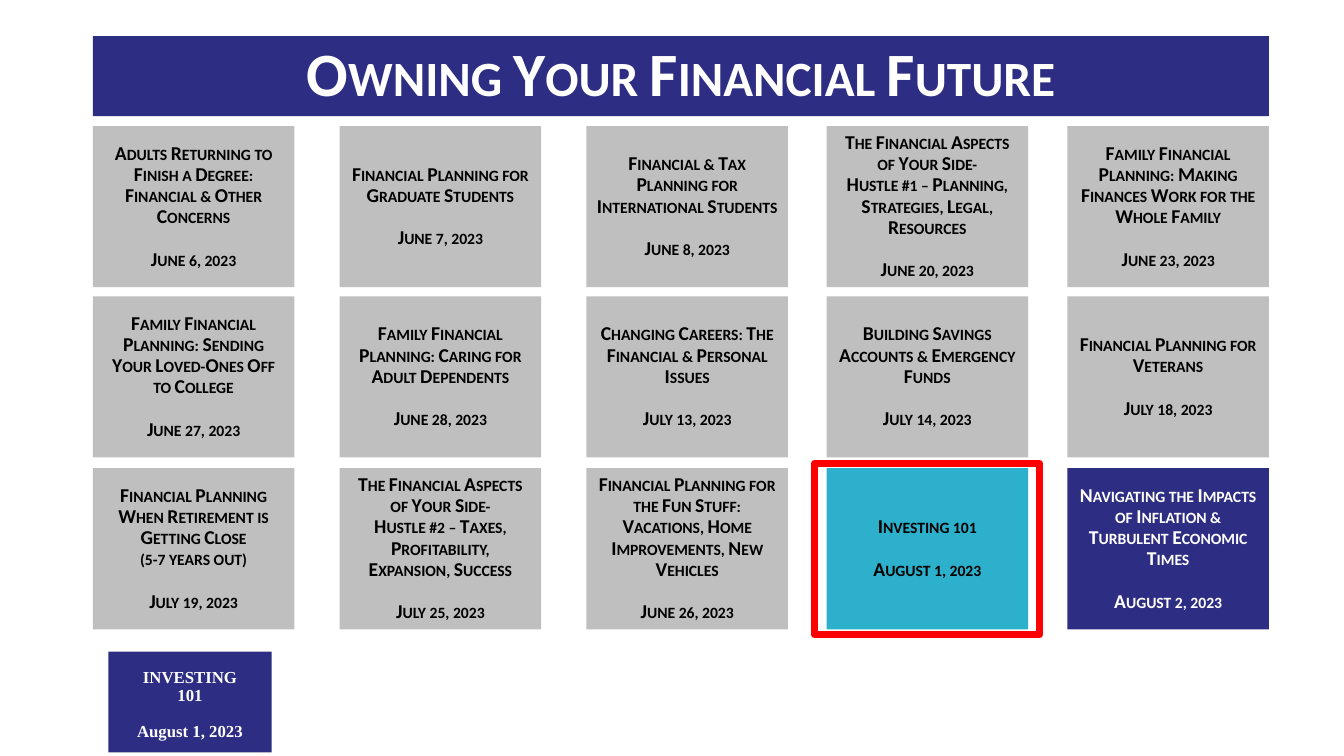
import pptx
import pptx.util
import pptx.dml.color
import pptx.enum.shapes
import pptx.enum.text

Cm = pptx.util.Cm
Pt = pptx.util.Pt

HEADING = "Owning Your Financial Future"
SESSIONS = [
    [
        ("Adults Returning to Finish a Degree: Financial & Other Concerns", "June 6, 2023"),
        ("Financial Planning for Graduate Students", "June 7, 2023"),
        ("Financial & Tax Planning for International Students", "June 8, 2023"),
        ("The Financial Aspects of Your Side-\nHustle #1 – Planning, Strategies, Legal, Resources",
         "June 20, 2023"),
        ("Family Financial Planning: Making Finances Work for the Whole Family", "June 23, 2023"),
    ],
    [
        ("Family Financial Planning: Sending Your Loved-Ones Off to College", "June 27, 2023"),
        ("Family Financial Planning: Caring for Adult Dependents", "June 28, 2023"),
        ("Changing Careers: The Financial & Personal Issues", "July 13, 2023"),
        ("Building Savings Accounts & Emergency Funds", "July 14, 2023"),
        ("Financial Planning for Veterans", "July 18, 2023"),
    ],
    [
        ("Financial Planning When Retirement is Getting Close\n(5-7 years out)", "July 19, 2023"),
        ("The Financial Aspects of Your Side-\nHustle #2 – Taxes, Profitability, Expansion, Success",
         "July 25, 2023"),
        ("Financial Planning for the Fun Stuff: Vacations, Home Improvements, New Vehicles",
         "June 26, 2023"),
        ("Investing 101", "August 1, 2023"),
        ("Navigating the Impacts of Inflation & Turbulent Economic Times", "August 2, 2023"),
    ],
]
CURRENT_SESSION = ["INVESTING", "101", "August 1, 2023"]

THEME = {
    "navy": "2D2D83", "grey": "BFBFBF", "teal": "2DB0CC",
    "red": "FF0000", "white": "FFFFFF", "black": "000000",
    "font": "Calibri", "label_font": "Times New Roman",
    "heading_size": 44, "session_size": 14, "label_size": 12,
}
SPECIAL_COLOURS = {(2, 3): ("teal", "black"), (2, 4): ("navy", "white")}

COLUMN_LEFTS = [2.34, 8.56, 14.78, 20.83, 26.9]
ROW_TOPS = [3.18, 7.47, 11.8]
CARD_WIDTH, CARD_HEIGHT = 5.08, 4.06


def colour(name):
    return pptx.dml.color.RGBColor.from_string(THEME[name])


def add_box(page, left, top, width, height, fill=None, line=None, line_width=0):
    box = page.shapes.add_shape(
        pptx.enum.shapes.MSO_SHAPE.RECTANGLE, Cm(left), Cm(top), Cm(width), Cm(height))
    box.shadow.inherit = False
    if fill:
        box.fill.solid()
        box.fill.fore_color.rgb = colour(fill)
    else:
        box.fill.background()
    if line:
        box.line.color.rgb = colour(line)
        box.line.width = Pt(line_width)
    else:
        box.line.fill.background()
    return box


def write_text(box, lines, size, ink, font="font", small_caps=True, last_gap=0, inset_top=0.13):
    frame = box.text_frame
    frame.word_wrap = True
    frame.vertical_anchor = pptx.enum.text.MSO_ANCHOR.MIDDLE
    frame.margin_left = frame.margin_right = Cm(0.24)
    frame.margin_top, frame.margin_bottom = Cm(inset_top), Cm(0.13)
    for index, line in enumerate(lines):
        para = frame.add_paragraph() if index else frame.paragraphs[0]
        para.alignment = pptx.enum.text.PP_ALIGN.CENTER
        para.line_spacing = 0.9
        if index and index == len(lines) - 1:
            para.space_before = Pt(last_gap)
        for part_index, part in enumerate(line.split("\n")):
            if part_index:
                para.add_line_break()
            span = para.add_run()
            span.text = part
            span.font.name = THEME[font]
            span.font.size = Pt(THEME[size])
            span.font.bold = True
            span.font.color.rgb = colour(ink)
            if small_caps:
                span.font._element.set("cap", "small")


def main():
    deck = pptx.Presentation()
    deck.slide_width, deck.slide_height = Cm(33.87), Cm(19.05)
    page = deck.slides.add_slide(deck.slide_layouts[6])

    label = add_box(page, 2.73, 16.42, 4.12, 2.54, fill="navy")
    write_text(label, CURRENT_SESSION, "label_size", "white", font="label_font",
               small_caps=False, last_gap=13.2, inset_top=0.28)

    banner_width = COLUMN_LEFTS[-1] + CARD_WIDTH - COLUMN_LEFTS[0]
    banner = add_box(page, COLUMN_LEFTS[0], 0.91, banner_width, 2.02, fill="navy")
    write_text(banner, [HEADING], "heading_size", "white")

    for row, (top, sessions) in enumerate(zip(ROW_TOPS, SESSIONS)):
        for column, (left, session) in enumerate(zip(COLUMN_LEFTS, sessions)):
            fill, ink = SPECIAL_COLOURS.get((row, column), ("grey", "black"))
            card = add_box(page, left, top, CARD_WIDTH, CARD_HEIGHT, fill=fill)
            write_text(card, session, "session_size", ink, last_gap=15.2)

    add_box(page, 20.52, 11.68, 5.69, 4.32, line="red", line_width=5)
    deck.save("out.pptx")


if __name__ == "__main__":
    main()
